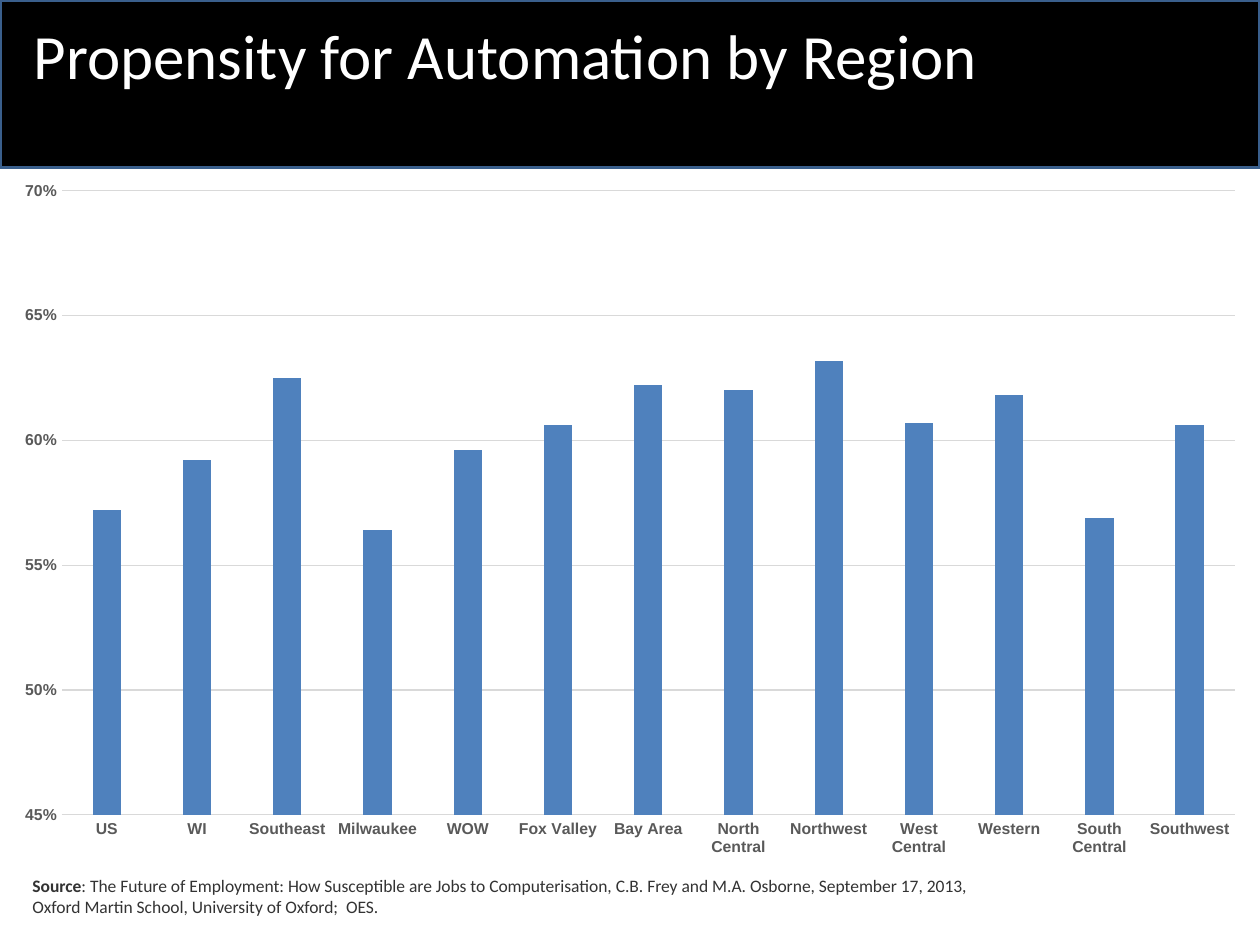
"""Build a slide with a column chart of automation propensity by region."""
from dataclasses import dataclass

from lxml import etree
from pptx import Presentation
from pptx import util as u
from pptx.chart.data import CategoryChartData
from pptx.dml.color import RGBColor
from pptx.enum import chart as ch, shapes, text

BLACK = RGBColor(0x00, 0x00, 0x00)
WHITE = RGBColor(0xFF, 0xFF, 0xFF)
NAVY = RGBColor(0x3A, 0x5F, 0x8C)
BLUE = RGBColor(0x4F, 0x81, 0xBD)
DARK = RGBColor(0x33, 0x33, 0x33)
GREY = RGBColor(0x59, 0x59, 0x59)
PALE = RGBColor(0xD9, 0xD9, 0xD9)

WIDTH, HEIGHT = u.Inches(10), u.Inches(7.5)
BANNER = 1.33 / 7.5

REGIONS = {
    "US": 0.572, "WI": 0.592, "Southeast": 0.625, "Milwaukee": 0.564,
    "WOW": 0.596, "Fox Valley": 0.606, "Bay Area": 0.622,
    "North Central": 0.62, "Northwest": 0.632, "West Central": 0.607,
    "Western": 0.618, "South Central": 0.569, "Southwest": 0.606,
}


@dataclass(frozen=True)
class Box:
    """A rectangle given as shares of the slide's size."""
    left: float
    top: float
    width: float
    height: float

    def emu(self) -> tuple[int, int, int, int]:
        """Return the rectangle in slide units."""
        return (round(self.left * WIDTH), round(self.top * HEIGHT),
                round(self.width * WIDTH), round(self.height * HEIGHT))


@dataclass(frozen=True)
class Label:
    """Paragraphs of (wording, bold) runs that share one format."""
    box: Box
    paragraphs: tuple[tuple[tuple[str, bool], ...], ...]
    size: int
    color: RGBColor
    anchor: text.MSO_ANCHOR


LABELS = (
    Label(Box(0.017, 0.08 / 7.5, 0.825, 1.1 / 7.5),
          ((("Propensity for Automation by Region", False),),),
          36, WHITE, text.MSO_ANCHOR.TOP),
    Label(Box(0.016, 6.88 / 7.5, 0.984, 0.46 / 7.5),
          ((("Source", True),
            (": The Future of Employment: How Susceptible are Jobs to Computerisation, "
             "C.B. Frey and M.A. Osborne, September 17, 2013,", False)),
           (("Oxford Martin School, University of Oxford;  OES.", False),)),
          10, DARK, text.MSO_ANCHOR.MIDDLE),
)


def add_banner(s, box: Box) -> None:
    """Draw the dark band behind the title."""
    sp = s.shapes.add_shape(shapes.MSO_SHAPE.RECTANGLE, *box.emu())
    sp.shadow.inherit = False
    sp.fill.solid()
    sp.fill.fore_color.rgb = BLACK
    sp.line.color.rgb = NAVY
    sp.line.width = u.Pt(2)


def add_label(s, label: Label) -> None:
    """Draw one text box."""
    tf = s.shapes.add_textbox(*label.box.emu()).text_frame
    tf.word_wrap = True
    tf.vertical_anchor = label.anchor
    for i, pieces in enumerate(label.paragraphs):
        p = tf.add_paragraph() if i else tf.paragraphs[0]
        for wording, bold in pieces:
            r = p.add_run()
            r.text = wording
            r.font.name = "Calibri"
            r.font.size = u.Pt(label.size)
            r.font.bold = bold
            r.font.color.rgb = label.color


def format_font(font, size: int, color: RGBColor, bold: bool = False) -> None:
    """Set the font of a chart or of one of its axes."""
    font.name = "Arial"
    font.size = u.Pt(size)
    font.bold = bold
    font.color.rgb = color


def format_line(line) -> None:
    """Give an axis or grid line its thin pale stroke."""
    line.color.rgb = PALE
    line.width = u.Pt(0.75)


def add_region_chart(s, box: Box) -> None:
    """Draw the column chart of regions."""
    data = CategoryChartData(number_format="0%")
    data.categories = list(REGIONS)
    data.add_series("Series 1", list(REGIONS.values()))
    chart = s.shapes.add_chart(
        ch.XL_CHART_TYPE.COLUMN_CLUSTERED, *box.emu(), data).chart
    chart.has_title = False
    chart.has_legend = False
    format_font(chart.font, 10, BLACK)

    plot = chart.plots[0]
    plot.vary_by_categories = False
    plot.gap_width = 219
    plot.overlap = -27
    fill = plot.series[0].format.fill
    fill.solid()
    fill.fore_color.rgb = BLUE

    for axis in (chart.category_axis, chart.value_axis):
        axis.major_tick_mark = axis.minor_tick_mark = ch.XL_TICK_MARK.NONE
        format_font(axis.tick_labels.font, 9, GREY, bold=True)
    format_line(chart.category_axis.format.line)

    values = chart.value_axis
    values.minimum_scale, values.maximum_scale = 0.45, 0.7
    values.major_unit = 0.05
    values.tick_labels.number_format = "0%"
    values.tick_labels.number_format_is_linked = False
    values.format.line.fill.background()
    values.has_major_gridlines = True
    format_line(values.major_gridlines.format.line)


def main() -> None:
    """Build and save the slide."""
    prs = Presentation()
    prs.slide_width, prs.slide_height = WIDTH, HEIGHT
    s = prs.slides.add_slide(prs.slide_layouts[6])
    add_banner(s, Box(0, 0, 1, BANNER))
    for label in LABELS:
        add_label(s, label)
    add_region_chart(s, Box(0, BANNER, 1, 5.58 / 7.5))
    prs.save("out.pptx")


if __name__ == "__main__":
    main()
